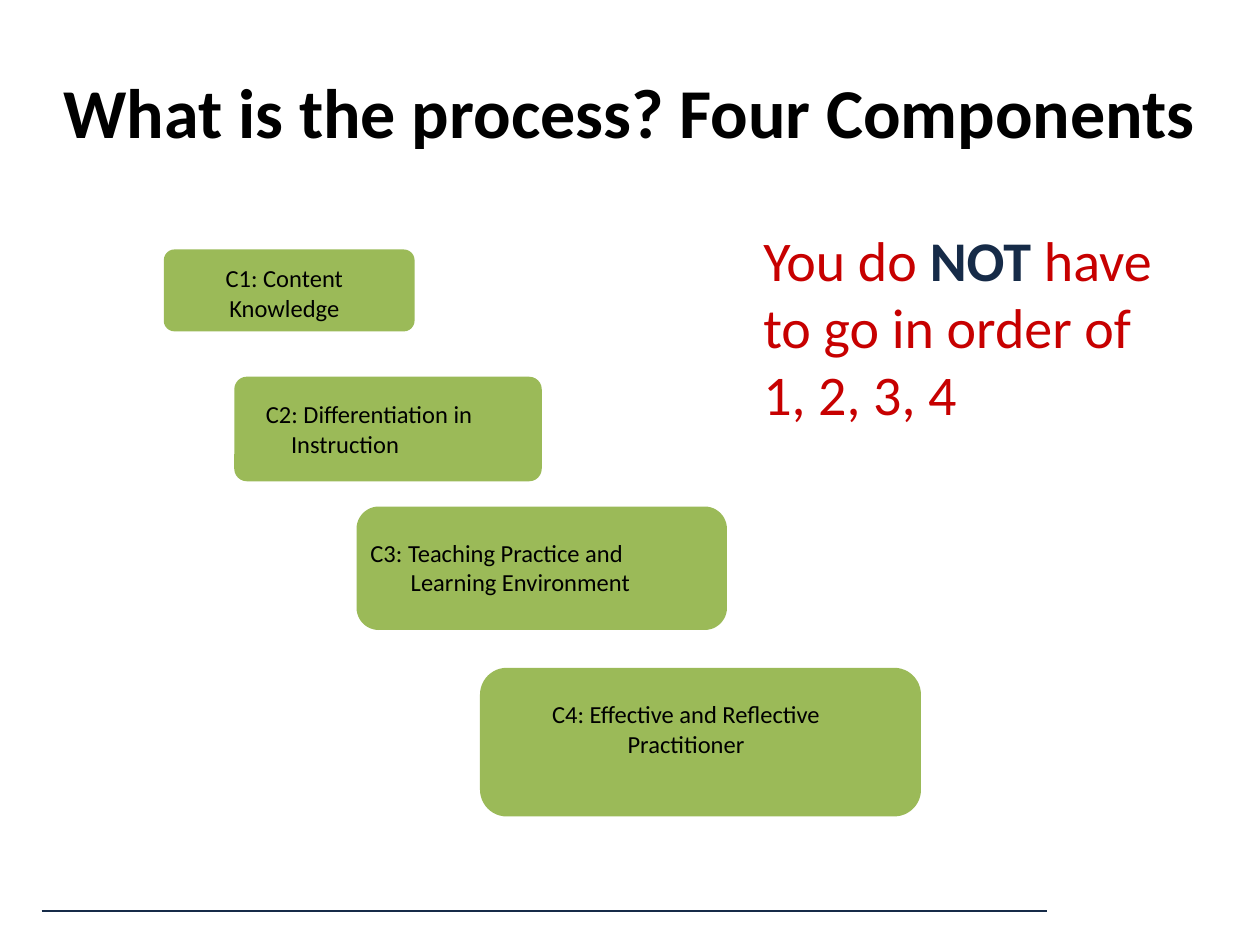
from lxml.etree import SubElement
from pptx import Presentation
from pptx.dml.color import RGBColor
from pptx.enum.shapes import MSO_CONNECTOR, MSO_SHAPE
from pptx.enum.text import MSO_ANCHOR, PP_ALIGN
from pptx.oxml.ns import qn
from pptx.util import Inches, Pt

WIDTH, HEIGHT = 10, 7.5
COLORS = {"ink": "000000", "card": "9BBA58", "accent": "C70000", "navy": "162B48"}

# label, card box, corner share, label box, hanging indent, alignment
COMPONENTS = [
    ("C1: Content Knowledge", (1.3, 1.98, 1.99, 0.65), 0.13,
     (0.48, 0.11, 1.15), (0.04, -0.03), PP_ALIGN.LEFT),
    ("C2: Differentiation in Instruction", (1.86, 2.99, 2.44, 0.83), 0.12,
     (0.23, 0.18, 2.41), (0.22, -0.2), PP_ALIGN.LEFT),
    ("C3: Teaching Practice and Learning Environment", (2.83, 4.02, 2.94, 0.98), 0.18,
     (0.09, 0.25, 2.6), (0.34, -0.32), PP_ALIGN.LEFT),
    ("C4: Effective and Reflective Practitioner", (3.81, 5.3, 3.5, 1.18), 0.18,
     (0.28, 0.25, 2.7), (0.01, 0), PP_ALIGN.CENTER),
]
LABEL_HEIGHT = 0.47


def color(name):
    return RGBColor.from_string(COLORS[name])


def write(para, text, size=14, tint="ink", bold=False):
    span = para.add_run()
    span.text = text
    span.font.name = "Calibri"
    span.font.size = Pt(size)
    span.font.bold = bold
    span.font.color.rgb = color(tint)


def add_text_frame(page, box, margin=None):
    """Add a wrapping text box, with equal margins if given."""
    frame = page.shapes.add_textbox(*map(Inches, box)).text_frame
    frame.word_wrap = True
    if margin is not None:
        frame.margin_left = frame.margin_right = Inches(margin)
        frame.margin_top = frame.margin_bottom = Inches(margin)
    return frame


def add_footer_rule(page, left, right, top):
    rule = page.shapes.add_connector(
        MSO_CONNECTOR.STRAIGHT, *map(Inches, (left, top, right, top)))
    rule.line.color.rgb = color("navy")
    rule.line.width = Pt(0.75)
    SubElement(rule._element.spPr, qn("a:effectLst"))


def add_title(page, box):
    title = page.shapes.title
    title.left, title.top, title.width, title.height = map(Inches, box)
    frame = title.text_frame
    frame.vertical_anchor = MSO_ANCHOR.TOP
    para = frame.paragraphs[0]
    para.alignment = PP_ALIGN.CENTER
    write(para, "What is the process? Four Components", size=40, bold=True)


def add_component(page, label, box, corner, label_box, hanging, align):
    """Draw a card and its label; label_box is relative to the card."""
    card = page.shapes.add_shape(MSO_SHAPE.ROUNDED_RECTANGLE, *map(Inches, box))
    card.adjustments[0] = corner
    card.shadow.inherit = False
    card.fill.solid()
    card.fill.fore_color.rgb = color("card")
    card.line.fill.background()

    left, top, width = label_box
    frame = add_text_frame(
        page, (box[0] + left, box[1] + top, width, LABEL_HEIGHT), margin=0)
    para = frame.paragraphs[0]
    para.alignment = align
    margin, indent = hanging
    properties = para._p.get_or_add_pPr()
    properties.set("marL", str(Inches(margin)))
    properties.set("indent", str(Inches(indent)))
    write(para, label)


def add_order_note(page, box):
    para = add_text_frame(page, box).paragraphs[0]
    write(para, "You do ", size=32, tint="accent")
    write(para, "NOT", size=32, tint="navy", bold=True)
    write(para, " have to go in order of", size=32, tint="accent")
    para.add_line_break()
    write(para, "1, 2, 3, 4", size=32, tint="accent")


def main():
    deck = Presentation()
    deck.slide_width, deck.slide_height = Inches(WIDTH), Inches(HEIGHT)
    page = deck.slides.add_slide(deck.slide_layouts.get_by_name("Title Only"))
    add_footer_rule(page, 0.33, 8.31, 7.23)
    add_title(page, (0.33, 0.49, 9.33, 0.99))
    for component in COMPONENTS:
        add_component(page, *component)
    add_order_note(page, (5.96, 1.74, 3.7, 1.72))
    deck.save("out.pptx")


if __name__ == "__main__":
    main()
